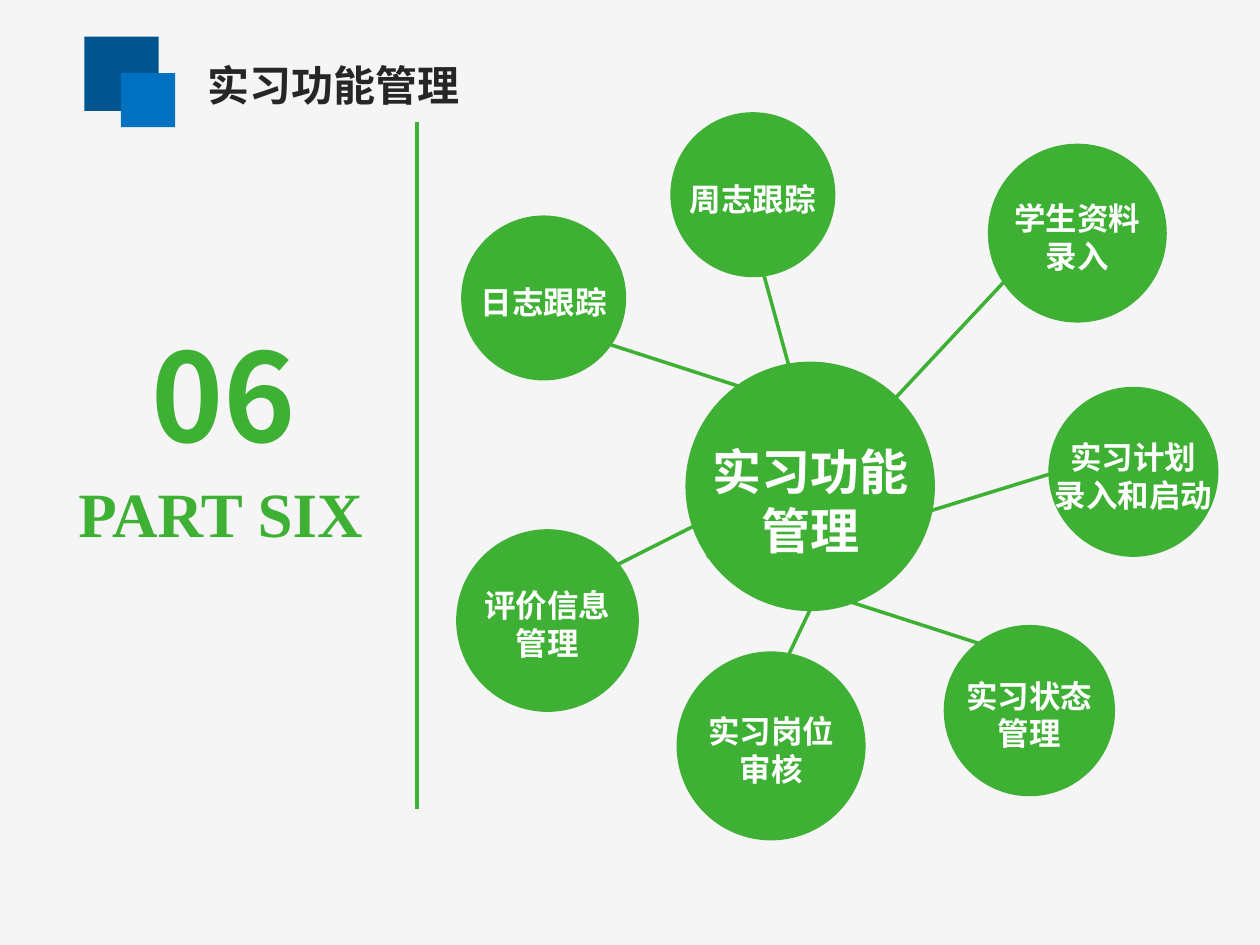
from dataclasses import dataclass
from lxml.etree import SubElement
from pptx import Presentation
from pptx.dml.color import RGBColor
from pptx.enum.shapes import MSO_CONNECTOR, MSO_SHAPE
from pptx.enum.text import MSO_ANCHOR, PP_ALIGN
from pptx.oxml.ns import qn
from pptx.util import Inches, Pt


@dataclass(frozen=True)
class Theme:
    background: str = "F5F5F5"
    green: str = "3EB034"
    dark_blue: str = "005490"
    blue: str = "0070C0"
    ink: str = "262626"
    white: str = "FFFFFF"
    sans: str = "Noto Sans CJK SC"
    serif: str = "Times New Roman"
    title_size: int = 24
    number_size: int = 70
    caption_size: int = 36
    hub_size: int = 28
    node_size: int = 18
    line_width: int = 2
    leading: float = 1.2


THEME = Theme()
COLUMNS = 100
WIDTH, HEIGHT = Inches(10), Inches(7.5)
UNIT = WIDTH / COLUMNS

TITLE = "实习功能管理"
NUMBER = "06"
CAPTION = "PART SIX"
LOGO_SQUARES = [
    (6.7, 2.9, 5.9, THEME.dark_blue),
    (9.6, 5.8, 4.3, THEME.blue),
]
DIVIDER = (33.1, 9.7, 33.1, 64.2)
HUB = (["实习功能", "管理"], (54.4, 28.7, 19.8))
NODES = [
    (["学生资料", "录入"], (78.4, 11.4, 14.2), (66.2, 36.8, 84.7, 17)),
    (["日志跟踪"], (36.6, 17.1, 13.1), (42.4, 25.4, 73, 35.3)),
    (["实习计划", "录入和启动"], (83.2, 30.7, 13.5), (60, 44.8, 86, 36.8)),
    (["评价信息", "管理"], (36.2, 42, 14.5), (41.5, 48.6, 62.9, 37.8)),
    (["周志跟踪"], (53.2, 8.9, 13.1), (63.7, 33, 59.3, 17)),
    (["实习状态", "管理"], (74.9, 49.6, 13.6), (56.1, 44.1, 86.8, 54)),
    (["实习岗位", "审核"], (53.7, 51.7, 15), (58.2, 61.2, 65.1, 46.7)),
]


def grid(*cells):
    return [round(cell * UNIT) for cell in cells]


def color(value):
    return RGBColor.from_string(value)


def write(shape, lines, size, ink, font=THEME.sans, align=PP_ALIGN.CENTER, drop=0):
    frame = shape.text_frame
    frame.word_wrap = False
    frame.vertical_anchor = MSO_ANCHOR.MIDDLE
    frame.margin_left = frame.margin_right = frame.margin_bottom = 0
    frame.margin_top = Inches(drop)
    for index, line in enumerate(lines):
        paragraph = frame.add_paragraph() if index else frame.paragraphs[0]
        paragraph.alignment = align
        paragraph.line_spacing = Pt(size * THEME.leading)
        run = paragraph.add_run()
        run.text = line
        run.font.size = Pt(size)
        run.font.bold = True
        run.font.name = font
        run.font.color.rgb = color(ink)
        SubElement(run.font._element, qn("a:ea"), typeface=font)


def add_filled(slide, kind, left, top, side, fill):
    shape = slide.shapes.add_shape(kind, *grid(left, top, side, side))
    shape.shadow.inherit = False
    shape.fill.solid()
    shape.fill.fore_color.rgb = color(fill)
    shape.line.fill.background()
    return shape


def add_line(slide, ends):
    connector = slide.shapes.add_connector(MSO_CONNECTOR.STRAIGHT, *grid(*ends))
    connector.line.color.rgb = color(THEME.green)
    connector.line.width = Pt(THEME.line_width)
    SubElement(connector._element.spPr, qn("a:effectLst"))


def add_circle(slide, lines, place, size, drop):
    circle = add_filled(slide, MSO_SHAPE.OVAL, *place, THEME.green)
    write(circle, lines, size, THEME.white, drop=drop)


def main():
    presentation = Presentation()
    presentation.slide_width, presentation.slide_height = WIDTH, HEIGHT
    slide = presentation.slides.add_slide(presentation.slide_layouts[5])
    slide.background.fill.solid()
    slide.background.fill.fore_color.rgb = color(THEME.background)

    for left, top, side, fill in LOGO_SQUARES:
        add_filled(slide, MSO_SHAPE.RECTANGLE, left, top, side, fill)

    title = slide.shapes.title
    title.left, title.top, title.width, title.height = grid(16.5, 4, 76.8, 5)
    write(title, [TITLE], THEME.title_size, THEME.ink, align=PP_ALIGN.LEFT, drop=0.04)

    number = slide.shapes.add_textbox(*grid(4.4, 24.1, 26.7, 12.8))
    write(number, [NUMBER], THEME.number_size, THEME.green, drop=0.14)
    caption = slide.shapes.add_textbox(*grid(1.9, 37.1, 31.2, 7.1))
    write(caption, [CAPTION], THEME.caption_size, THEME.green, THEME.serif)

    add_line(slide, DIVIDER)
    for _, _, spoke in NODES:
        add_line(slide, spoke)
    lines, place = HUB
    add_circle(slide, lines, place, THEME.hub_size, 0.22)
    for lines, place, _ in NODES:
        add_circle(slide, lines, place, THEME.node_size, 0.06)

    presentation.save("out.pptx")


if __name__ == "__main__":
    main()
